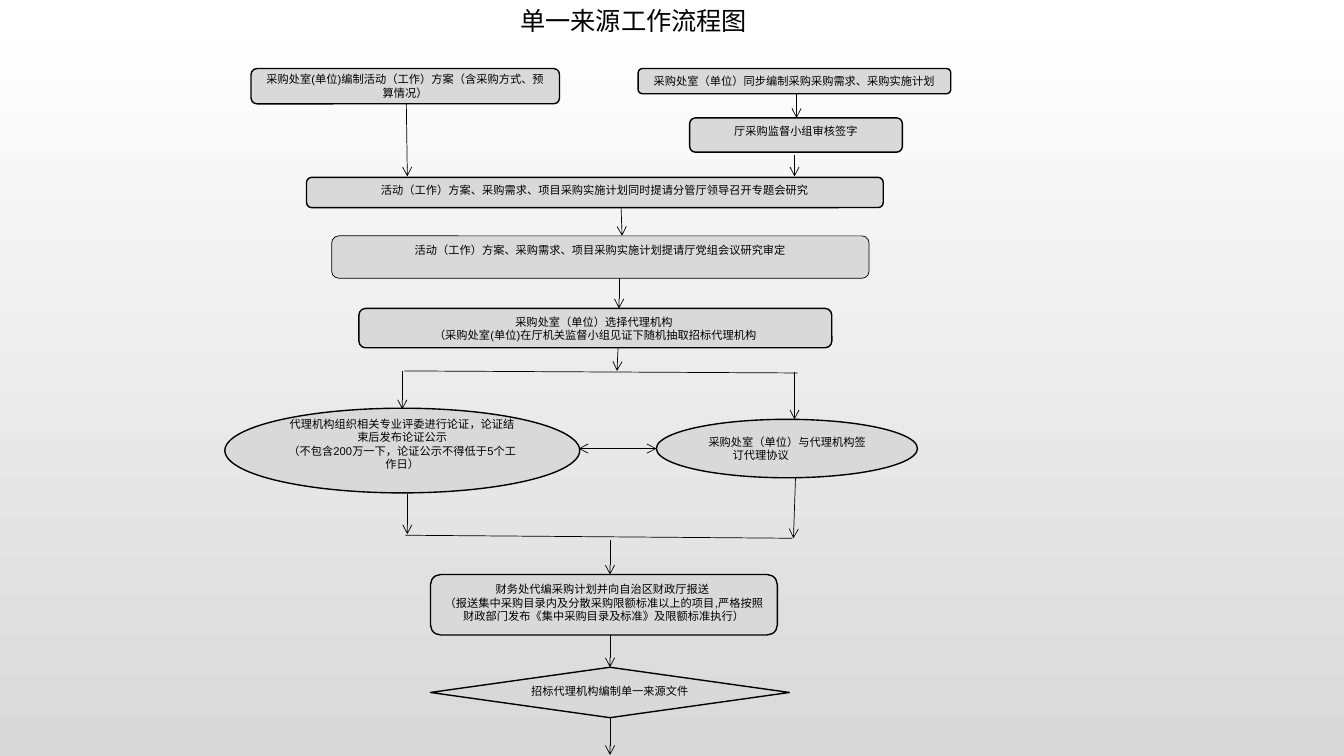
from lxml import etree
from pptx import Presentation
from pptx import util as u
from pptx.dml.color import RGBColor
from pptx.enum import shapes, text
from pptx.oxml.ns import qn

# Grid: 1333 columns by 750 rows
COLUMNS, ROWS = 1333, 750
CELL = u.Inches(7.5) // ROWS


def grid(*cells):
    return [CELL * cell for cell in cells]


def colour(value):
    return RGBColor.from_string(value)


presentation = Presentation()
presentation.slide_width, presentation.slide_height = grid(COLUMNS, ROWS)
slide = presentation.slides.add_slide(presentation.slide_layouts[6])

# Background: white at the top to grey at the bottom
background = slide.background.fill
background.gradient()
background.gradient_angle = 270
for stop, value in zip(background.gradient_stops, ("FFFFFF", "D9D9D9")):
    stop.color.rgb = colour(value)

# Title
title = slide.shapes.add_textbox(*grid(362, 0, 533, 40))
title.text_frame.word_wrap = True
title.text_frame.text = "单一来源工作流程图"
paragraph = title.text_frame.paragraphs[0]
paragraph.alignment = text.PP_ALIGN.CENTER
paragraph.font.size, paragraph.font.name = u.Pt(18), "Arial"
paragraph.font.color.rgb = colour("000000")

# Steps: shape, place, line width, anchor, text
BOX = shapes.MSO_SHAPE.ROUNDED_RECTANGLE
OVAL = shapes.MSO_SHAPE.OVAL
DIAMOND = shapes.MSO_SHAPE.DIAMOND
TOP, MIDDLE = text.MSO_ANCHOR.TOP, text.MSO_ANCHOR.MIDDLE
steps = {
    "plan": (BOX, (249, 68, 306, 35), 1, MIDDLE,
             "采购处室(单位)编制活动（工作）方案（含采购方式、预算情况）"),
    "needs": (BOX, (633, 68, 310, 25), 1, TOP,
              "采购处室（单位）同步编制采购采购需求、采购实施计划"),
    "review": (BOX, (684, 117, 211, 34), 1, TOP, "厅采购监督小组审核签字"),
    "meeting": (BOX, (304, 176, 572, 30), 1, TOP,
                "活动（工作）方案、采购需求、项目采购实施计划同时提请分管厅领导召开专题会研究"),
    "approval": (BOX, (329, 234, 533, 42), 0.5, TOP,
                 "活动（工作）方案、采购需求、项目采购实施计划提请厅党组会议研究审定"),
    "agency": (BOX, (356, 306, 469, 39), 1, TOP,
               "采购处室（单位）选择代理机构 \n"
               "（采购处室(单位)在厅机关监督小组见证下随机抽取招标代理机构"),
    "experts": (OVAL, (223, 405, 352, 84), 1, MIDDLE,
                "代理机构组织相关专业评委进行论证，论证结束后发布论证公示\n"
                "（不包含200万一下，论证公示不得低于5个工作日）"),
    "agreement": (OVAL, (651, 416, 259, 58), 1, MIDDLE,
                  "采购处室（单位）与代理机构签订代理协议"),
    "report": (BOX, (427, 570, 344, 60), 1, TOP,
               "财务处代编采购计划并向自治区财政厅报送 \n"
               "（报送集中采购目录内及分散采购限额标准以上的项目,"
               "严格按照财政部门发布《集中采购目录及标准》及限额标准执行）"),
    "document": (DIAMOND, (427, 662, 356, 50), 1, TOP, "招标代理机构编制单一来源文件"),
}
frames = {}
for step, (kind, place, width, anchor, words) in steps.items():
    shape = slide.shapes.add_shape(kind, *grid(*place))
    shape.shadow.inherit = False
    shape.fill.solid()
    shape.fill.fore_color.rgb = colour("D9D9D9")
    shape.line.color.rgb = colour("000000")
    shape.line.width = u.Pt(width)
    frame = frames[step] = shape.text_frame
    frame.word_wrap, frame.vertical_anchor = True, anchor
    frame.text = words
    for paragraph in frame.paragraphs:
        paragraph.alignment = text.PP_ALIGN.CENTER
        paragraph.font.size, paragraph.font.name = u.Pt(8), "Arial"
        paragraph.font.color.rgb = colour("000000")

# The experts' text sits high; the agreement's second line is indented
frames["experts"].margin_bottom = CELL * 18
paragraph = frames["agreement"].paragraphs[0]
paragraph.alignment = text.PP_ALIGN.LEFT
properties = paragraph._p.get_or_add_pPr()
properties.set("marL", str(CELL * 28))
properties.set("indent", str(CELL * -24))

# Lines: start, end, ends that carry an arrowhead
FORWARD, BOTH, PLAIN = ("tailEnd",), ("headEnd", "tailEnd"), ()
lines = [
    ((403, 103), (404, 175), FORWARD),
    ((790, 93), (790, 117), FORWARD),
    ((788, 154), (788, 175), FORWARD),
    ((616, 206), (617, 234), FORWARD),
    ((614, 276), (614, 306), FORWARD),
    ((613, 345), (612, 368), FORWARD),
    ((401, 368), (791, 370), PLAIN),
    ((399, 368), (399, 406), FORWARD),
    ((788, 369), (788, 416), FORWARD),
    ((574, 445), (651, 445), BOTH),
    ((404, 490), (404, 530), FORWARD),
    ((789, 474), (787, 534), FORWARD),
    ((402, 531), (786, 534), PLAIN),
    ((605, 536), (605, 570), FORWARD),
    ((605, 630), (605, 662), FORWARD),
    ((605, 712), (605, 749), FORWARD),
]
for start, end, heads in lines:
    connector = slide.shapes.add_connector(
        shapes.MSO_CONNECTOR.STRAIGHT, *grid(*start, *end))
    connector.line.color.rgb = colour("000000")
    connector.line.width = u.Pt(0.5)
    for head in heads:
        etree.SubElement(connector.line._get_or_add_ln(), qn(f"a:{head}"), type="arrow")
    etree.SubElement(connector._element.spPr, qn("a:effectLst"))

presentation.save("out.pptx")
